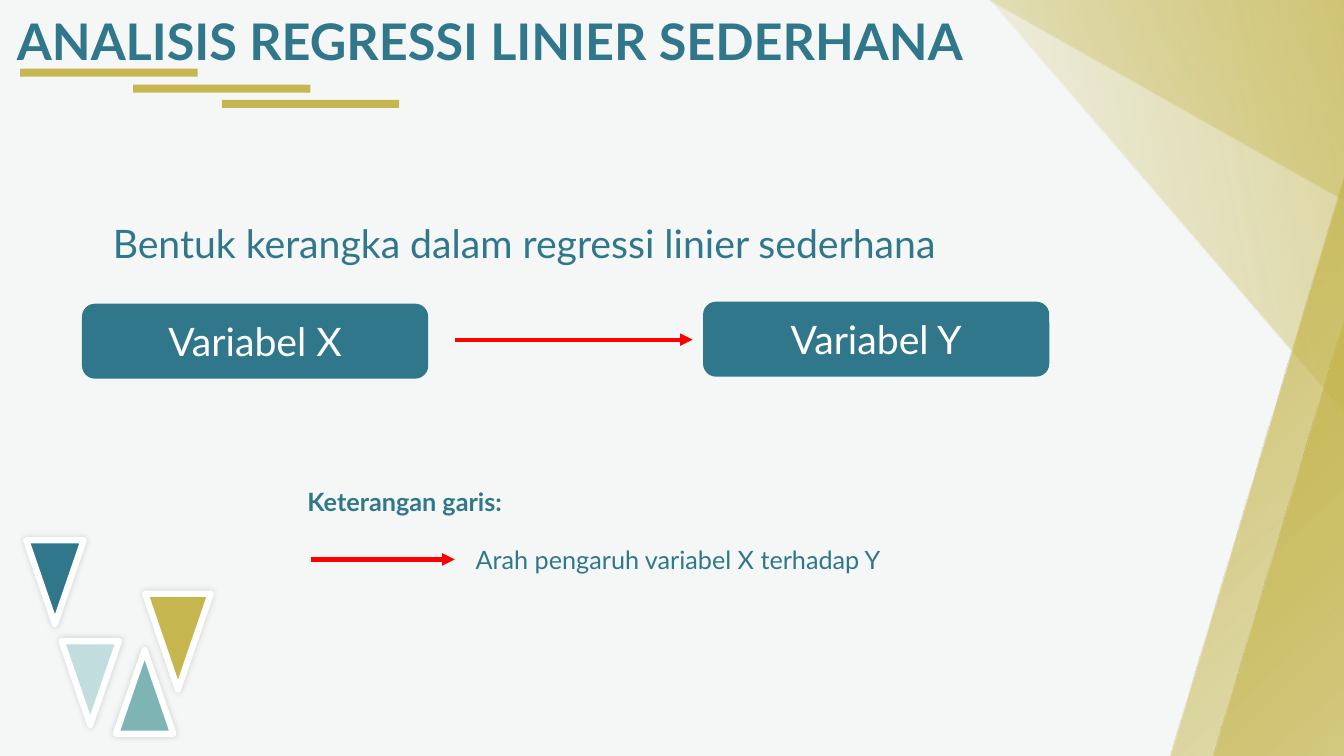
from dataclasses import dataclass

from lxml.etree import SubElement
from pptx import Presentation
from pptx.dml.color import RGBColor
from pptx.enum.shapes import MSO_CONNECTOR, MSO_SHAPE
from pptx.enum.text import MSO_ANCHOR, MSO_AUTO_SIZE, PP_ALIGN
from pptx.oxml.ns import qn
from pptx.util import Inches, Pt


@dataclass(frozen=True)
class Theme:
    font: str = "Lato"
    paper: str = "F5F7F6"
    white: str = "FFFFFF"
    teal: str = "30778B"
    sage: str = "7EB4B4"
    mist: str = "C1DDDE"
    gold: str = "C5B64F"
    red: str = "FF0000"
    black: str = "000000"
    title: int = 36
    body: int = 28
    note: int = 18


def add_tag(parent, tag, **attributes):
    return SubElement(parent, qn(tag), {key: str(value) for key, value in attributes.items()})


class SlideBuilder:
    def __init__(self, page, theme):
        self.page = page
        self.theme = theme

    def shape(self, kind, left, top, width, height, fill, line=None, weight=1):
        shape = self.page.shapes.add_shape(
            kind, Inches(left), Inches(top), Inches(width), Inches(height))
        shape.shadow.inherit = False
        shape.fill.solid()
        shape.fill.fore_color.rgb = RGBColor.from_string(fill)
        if line:
            shape.line.color.rgb = RGBColor.from_string(line)
            shape.line.width = Pt(weight)
        else:
            shape.line.fill.background()
        return shape

    def beam(self, left, top, rotation):
        """Rotated gold band that fades to nothing."""
        beam = self.shape(MSO_SHAPE.RECTANGLE, left, top, 8.92, 3.24, self.theme.gold)
        beam.rotation = rotation
        properties = beam._element.spPr
        solid = properties.find(qn("a:solidFill"))
        gradient = add_tag(properties, "a:gradFill", rotWithShape=1)
        stops = add_tag(gradient, "a:gsLst")
        for position, opacity in ((0, 100), (50, 50), (100, 0)):
            stop = add_tag(stops, "a:gs", pos=position * 1000)
            color = add_tag(stop, "a:srgbClr", val=self.theme.gold)
            add_tag(color, "a:alpha", val=opacity * 1000)
        add_tag(gradient, "a:lin", ang=120 * 60000, scaled=0)
        properties.replace(solid, gradient)

    def triangle(self, left, top, width, height, fill, rotation):
        """White-edged triangle with a soft shadow."""
        triangle = self.shape(MSO_SHAPE.ISOSCELES_TRIANGLE, left, top, width, height,
                              fill, self.theme.white, 4.5)
        triangle.rotation = rotation
        effects = triangle._element.spPr.find(qn("a:effectLst"))
        shadow = add_tag(effects, "a:outerShdw", blurRad=Pt(5), dist=0, dir=0,
                         algn="ctr", rotWithShape=0)
        color = add_tag(shadow, "a:srgbClr", val=self.theme.black)
        add_tag(color, "a:alpha", val=15000)

    def fill_text(self, frame, text, size, color, align, bold=False):
        frame.word_wrap = True
        para = frame.paragraphs[0]
        para.text = text
        para.alignment = align
        para.font.name = self.theme.font
        para.font.size = Pt(size)
        para.font.bold = bold
        para.font.color.rgb = RGBColor.from_string(color)

    def text(self, left, top, width, height, text, size, align=PP_ALIGN.LEFT, bold=False):
        box = self.page.shapes.add_textbox(
            Inches(left), Inches(top), Inches(width), Inches(height))
        self.fill_text(box.text_frame, text, size, self.theme.teal, align, bold)
        box.text_frame.auto_size = MSO_AUTO_SIZE.SHAPE_TO_FIT_TEXT

    def variable(self, left, top, text):
        box = self.shape(MSO_SHAPE.ROUNDED_RECTANGLE, left, top, 3.42, 0.73,
                         self.theme.teal, self.theme.teal)
        box.text_frame.vertical_anchor = MSO_ANCHOR.MIDDLE
        self.fill_text(box.text_frame, text, self.theme.body, self.theme.white,
                       PP_ALIGN.CENTER)

    def arrow(self, start, end, height):
        arrow = self.page.shapes.add_connector(
            MSO_CONNECTOR.STRAIGHT, Inches(start), Inches(height), Inches(end), Inches(height))
        arrow.line.color.rgb = RGBColor.from_string(self.theme.red)
        arrow.line.width = Pt(3)
        properties = arrow._element.spPr
        add_tag(properties.find(qn("a:ln")), "a:tailEnd", type="triangle")
        add_tag(properties, "a:effectLst")


def main():
    deck = Presentation()
    deck.slide_width, deck.slide_height = Inches(13.33), Inches(7.5)
    theme = Theme()
    slide = SlideBuilder(deck.slides.add_slide(deck.slide_layouts[6]), theme)

    # Backdrop
    slide.shape(MSO_SHAPE.RECTANGLE, 0, 0, 13.33, 7.5, theme.paper)
    for left, top, rotation in ((9.49, 3.73, 286.7), (9.49, 5.15, 286.7),
                                (8.64, -1.62, 29.5), (9.15, 0.3, 49.3)):
        slide.beam(left, top, rotation)

    # Title and its stepped bars
    slide.text(0.07, 0.05, 9.66, 0.71, "ANALISIS REGRESSI LINIER SEDERHANA",
               theme.title, PP_ALIGN.JUSTIFY, bold=True)
    for left, top in ((0.2, 0.68), (1.32, 0.84), (2.2, 0.99)):
        slide.shape(MSO_SHAPE.RECTANGLE, left, top, 1.76, 0.08, theme.gold)

    # Corner triangles
    for left, top, width, height, fill, rotation in (
            (1.15, 6.45, 0.57, 0.83, theme.sage, 0),
            (0.61, 6.36, 0.57, 0.83, theme.mist, 180),
            (0.26, 5.36, 0.57, 0.83, theme.teal, 180),
            (1.44, 5.89, 0.65, 0.95, theme.gold, 180)):
        slide.triangle(left, top, width, height, fill, rotation)

    # Framework diagram
    slide.text(1.02, 2.13, 9.61, 0.57, "Bentuk kerangka dalam regressi linier sederhana",
               theme.body, PP_ALIGN.JUSTIFY)
    slide.variable(0.82, 3.02, "Variabel X")
    slide.variable(6.98, 3, "Variabel Y")
    slide.arrow(4.51, 6.87, 3.37)

    # Legend
    slide.arrow(3.08, 4.51, 5.55)
    slide.text(4.62, 5.35, 4.71, 0.4, "Arah pengaruh variabel X terhadap Y", theme.note)
    slide.text(2.95, 4.78, 4.71, 0.4, "Keterangan garis:", theme.note, bold=True)

    deck.save("out.pptx")


if __name__ == "__main__":
    main()
